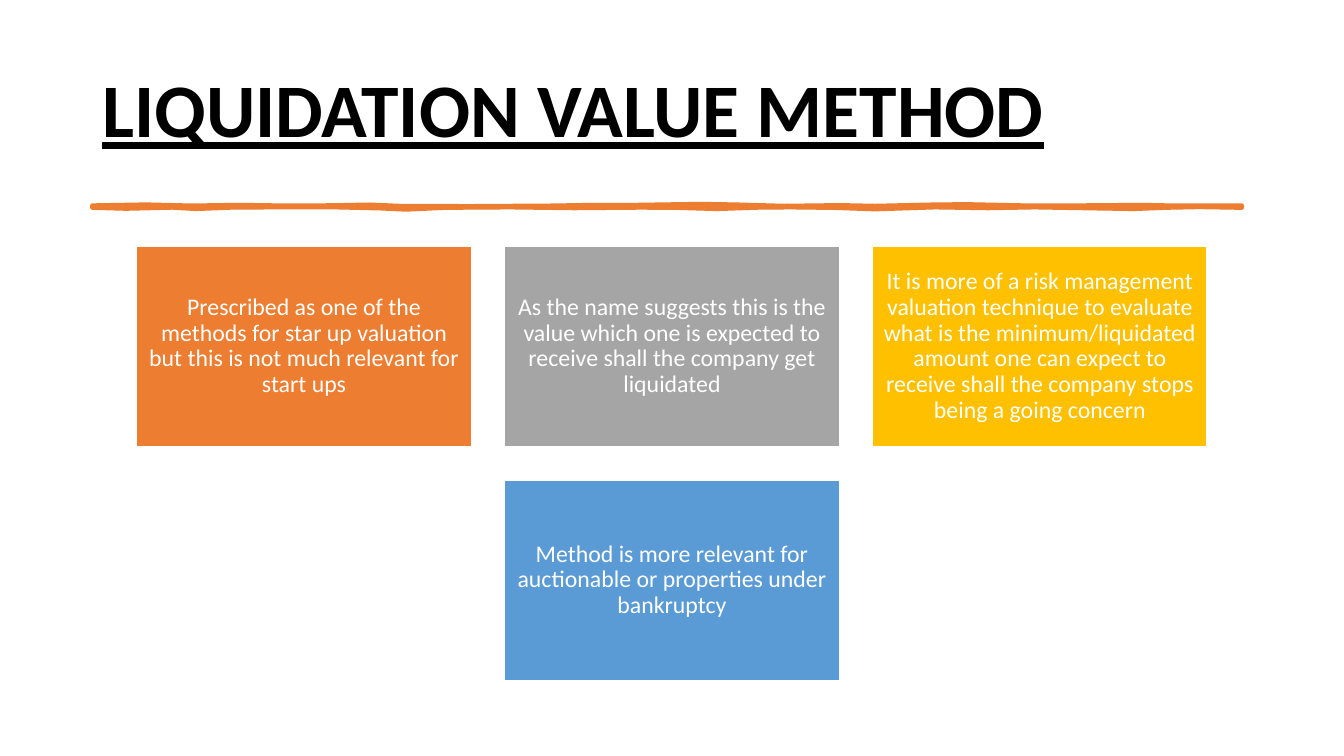
"""Build the slide on the liquidation value method."""
from dataclasses import dataclass
from typing import Any

from pptx import Presentation
from pptx.dml.color import RGBColor
from pptx.enum.shapes import MSO_SHAPE
from pptx.enum.text import MSO_ANCHOR, MSO_AUTO_SIZE, PP_ALIGN
from pptx.slide import Slide
from pptx.util import Pt


@dataclass(frozen=True)
class Theme:
    font: str = "Calibri"
    title_size: float = 54
    body_size: float = 17
    black: str = "000000"
    white: str = "FFFFFF"
    orange: str = "ED7D31"
    gray: str = "A5A5A5"
    gold: str = "FFC000"
    blue: str = "5B9BD5"


@dataclass(frozen=True)
class Card:
    col: int
    row: int
    fill: str
    text: str


THEME = Theme()
TITLE = "LIQUIDATION VALUE METHOD"
CARD_LEFT, CARD_TOP = 97.7, 175.9
CARD_W, CARD_H = 239, 143
STEP_X, STEP_Y = 262.8, 167
CARDS = [
    Card(0, 0, THEME.orange, "Prescribed as one of the methods for star up valuation "
         "but this is not much relevant for start ups"),
    Card(1, 0, THEME.gray, "As the name suggests this is the value which one is "
         "expected to receive shall the company get liquidated"),
    Card(2, 0, THEME.gold, "It is more of a risk management valuation technique to "
         "evaluate what is the minimum/liquidated amount one can expect to receive "
         "shall the company stops being a going concern"),
    Card(1, 1, THEME.blue, "Method is more relevant for auctionable or properties "
         "under bankruptcy"),
]
RULE_TOP = [
    (66, 146.9), (104, 146.2), (137, 147), (171, 146.5), (205, 147), (238, 146.8),
    (264, 146.3), (285, 147.2), (335, 147.4), (395, 147), (425, 146.5), (455, 146.5),
    (500, 145.8), (525, 146.2), (560, 147.2), (600, 146.7), (625, 147.2), (665, 146.3),
    (690, 146), (737, 147), (783, 146.8), (815, 146.5), (840, 147), (887, 146.9),
]
RULE_BOTTOM = [
    (887, 148.3), (857, 147.8), (832, 148.3), (810, 149.2), (769, 148.5), (739, 148),
    (706, 148.6), (668, 148), (625, 149.4), (597, 148.4), (565, 148), (542, 148.2),
    (512, 149.2), (482, 148.3), (457, 148.2), (410, 148.6), (364, 148), (318, 148.3),
    (290, 149.6), (271, 148.7), (240, 148), (208, 147.9), (165, 148.2), (140, 149.2),
    (123, 148.2), (90, 149), (66, 148.3),
]


def set_format(obj: Any, values: dict[str, Any]) -> None:
    """Set each named attribute on an object."""
    for name, value in values.items():
        setattr(obj, name, value)


def paint(sp: Any, fill: str, line: str, width: float) -> None:
    """Give a shape a plain fill and outline without shadow."""
    sp.shadow.inherit = False
    sp.fill.solid()
    sp.fill.fore_color.rgb = RGBColor.from_string(fill)
    sp.line.color.rgb = RGBColor.from_string(line)
    sp.line.width = Pt(width)


def write(sp: Any, text: str, color: str, align: PP_ALIGN, font: dict[str, Any],
          frame: dict[str, Any]) -> None:
    """Write one formatted paragraph into a shape."""
    tf = sp.text_frame
    set_format(tf, {"word_wrap": True, "auto_size": MSO_AUTO_SIZE.NONE,
                    "vertical_anchor": MSO_ANCHOR.MIDDLE, **frame})
    p = tf.paragraphs[0]
    set_format(p, {"alignment": align, "line_spacing": 0.9, "space_before": Pt(0)})
    r = p.add_run()
    r.text = text
    set_format(r.font, {"name": THEME.font, **font})
    r.font.color.rgb = RGBColor.from_string(color)


def add_title(slide: Slide) -> None:
    """Place and format the title placeholder."""
    sp = slide.shapes.title
    set_format(sp, {"left": Pt(66), "top": Pt(28.8),
                    "width": Pt(828), "height": Pt(104.4)})
    write(sp, TITLE, THEME.black, PP_ALIGN.LEFT,
          {"size": Pt(THEME.title_size), "bold": True, "underline": True}, {})


def add_rule(slide: Slide) -> None:
    """Draw the uneven brush rule below the title."""
    start, *rest = [(Pt(x), Pt(y)) for x, y in RULE_TOP + RULE_BOTTOM]
    builder = slide.shapes.build_freeform(*start)
    builder.add_line_segments(rest, close=True)
    paint(builder.convert_to_shape(), THEME.orange, THEME.orange, 3.25)


def add_card(slide: Slide, card: Card) -> None:
    """Draw one coloured card at its grid position."""
    sp = slide.shapes.add_shape(
        MSO_SHAPE.RECTANGLE, Pt(CARD_LEFT + card.col * STEP_X),
        Pt(CARD_TOP + card.row * STEP_Y), Pt(CARD_W), Pt(CARD_H))
    paint(sp, card.fill, THEME.white, 1)
    sides = ("left", "top", "right", "bottom")
    write(sp, card.text, THEME.white, PP_ALIGN.CENTER, {"size": Pt(THEME.body_size)},
          {f"margin_{side}": Pt(5.1) for side in sides})


def main() -> None:
    """Build and save the presentation."""
    prs = Presentation()
    set_format(prs, {"slide_width": Pt(960), "slide_height": Pt(540)})
    slide = prs.slides.add_slide(prs.slide_layouts.get_by_name("Title Only"))
    add_title(slide)
    add_rule(slide)
    for card in CARDS:
        add_card(slide, card)
    prs.save("out.pptx")


if __name__ == "__main__":
    main()
